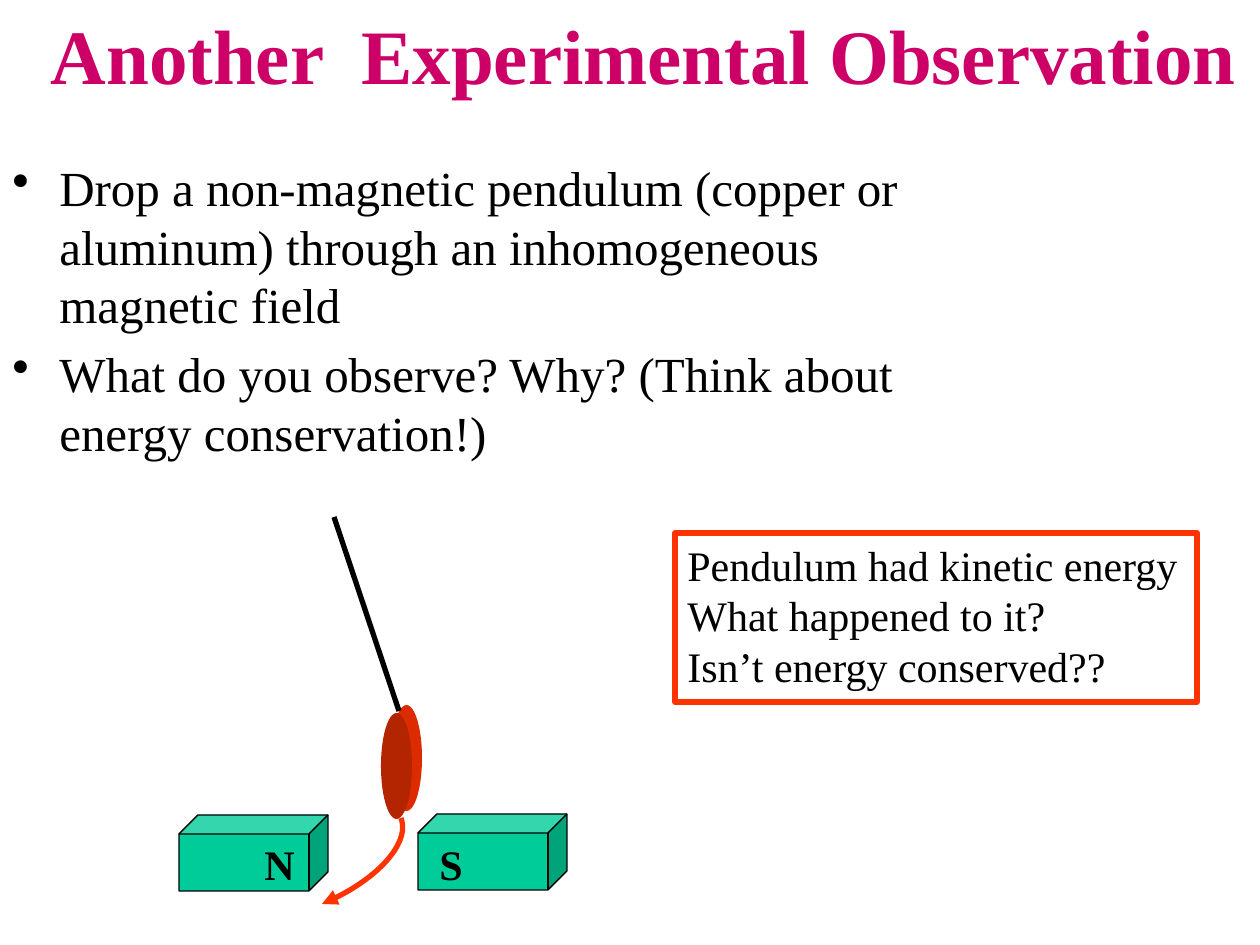
from dataclasses import dataclass
from typing import NamedTuple

from lxml import etree
from pptx import Presentation, util as u
from pptx.dml.color import RGBColor
from pptx.enum import shapes, text
from pptx.oxml import ns

PX = 914400 / 126


@dataclass(frozen=True)
class Theme:
    font: str = "Times New Roman"
    ink: str = "000000"
    title: str = "CC0066"
    magnet: str = "00CC99"
    accent: str = "FF3300"
    rim: str = "DD2B00"
    face: str = "B32400"
    head: int = 44
    body: int = 28
    note: int = 24
    thin: float = 0.75
    thick: int = 3


class Box(NamedTuple):
    x: int
    y: int
    w: int
    h: int


class Magnet(NamedTuple):
    box: Box
    pole: str
    label: Box


class Disc(NamedTuple):
    box: Box
    color: str


T = Theme()
KIND = shapes.MSO_SHAPE


def emu(px: float) -> int:
    return round(px * PX)


def span(box: Box) -> list[int]:
    return [emu(v) for v in box]


def rgb(code: str) -> RGBColor:
    return RGBColor.from_string(code)


def write(frame, lines: list[str], size: int, color: str = T.ink,
          bold: bool = False, align=text.PP_ALIGN.LEFT) -> None:
    for i, line in enumerate(lines):
        para = frame.paragraphs[0] if i == 0 else frame.add_paragraph()
        para.alignment = align
        run = para.add_run()
        run.text = line
        font = run.font
        font.name, font.size, font.bold = T.font, u.Pt(size), bold
        font.color.rgb = rgb(color)


def stroke(line, color: str, width: float) -> None:
    line.color.rgb = rgb(color)
    line.width = u.Pt(width)


def solid(slide, kind, box: Box, fill: str | None):
    shape = slide.shapes.add_shape(kind, *span(box))
    shape.shadow.inherit = False
    if fill:
        shape.fill.solid()
        shape.fill.fore_color.rgb = rgb(fill)
    else:
        shape.fill.background()
    return shape


def bullet(para) -> None:
    prop = para._p.get_or_add_pPr()
    prop.set("marL", str(emu(47)))
    prop.set("indent", str(-emu(47)))
    etree.SubElement(prop, ns.qn("a:buChar")).set("char", "•")


def magnet(slide, item: Magnet) -> None:
    cube = solid(slide, KIND.CUBE, item.box, T.magnet)
    stroke(cube.line, T.ink, T.thin)
    frame = slide.shapes.add_textbox(*span(item.label)).text_frame
    frame.word_wrap = False
    write(frame, [item.pole], T.note, bold=True)


def disc(slide, item: Disc) -> None:
    solid(slide, KIND.OVAL, item.box, item.color).line.fill.background()


def swing(slide, knots: list[tuple[int, int]], steps: int = 32) -> None:
    """Draw a cubic curve through short segments, with an arrowhead."""
    def spot(t: float) -> tuple[int, int]:
        parts = ((1 - t) ** 3, 3 * t * (1 - t) ** 2,
                 3 * t * t * (1 - t), t ** 3)
        x, y = (sum(a * k[i] for a, k in zip(parts, knots)) for i in (0, 1))
        return emu(x), emu(y)

    pts = [spot(i / steps) for i in range(steps + 1)]
    pen = slide.shapes.build_freeform(*pts[0], scale=1.0)
    pen.add_line_segments(pts[1:], close=False)
    curve = pen.convert_to_shape()
    curve.shadow.inherit = False
    curve.fill.background()
    stroke(curve.line, T.accent, T.thick)
    tail = etree.SubElement(curve.line._get_or_add_ln(), ns.qn("a:tailEnd"))
    tail.set("type", "triangle")


def main() -> None:
    deck = Presentation()
    deck.slide_width, deck.slide_height = u.Inches(10), u.Inches(7.5)
    slide = deck.slides.add_slide(deck.slide_layouts[5])

    # Title
    title = slide.shapes.title
    title.left, title.top, title.width, title.height = span(
        Box(0, -25, 1288, 157))
    title.text_frame.vertical_anchor = text.MSO_ANCHOR.MIDDLE
    write(title.text_frame, ["Another  Experimental Observation"], T.head,
          T.title, True, text.PP_ALIGN.CENTER)

    # Bulleted text
    frame = slide.shapes.add_textbox(*span(Box(0, 151, 927, 386))).text_frame
    frame.word_wrap = True
    write(frame, [
        "Drop a non-magnetic pendulum (copper or aluminum) through an "
        "inhomogeneous magnetic field",
        "What do you observe? Why? (Think about energy conservation!)",
    ], T.body)
    for i, para in enumerate(frame.paragraphs):
        para.space_before = u.Pt(T.body * 0.2 if i else 0)
        bullet(para)

    # Magnets
    for item in (
        Magnet(Box(179, 815, 149, 76), "N", Box(252, 832, 55, 63)),
        Magnet(Box(418, 814, 149, 76), "S", Box(427, 832, 49, 63)),
    ):
        magnet(slide, item)

    # Pendulum: bob with a thick rim, rod and swing
    for item in (
        Disc(Box(391, 705, 31, 106), T.rim),
        Disc(Box(381, 713, 31, 106), T.face),
    ):
        disc(slide, item)
    rod = slide.shapes.add_connector(
        shapes.MSO_CONNECTOR.STRAIGHT, emu(399), emu(711), emu(334), emu(517))
    stroke(rod.line, T.ink, T.thick)
    etree.SubElement(rod._element.spPr, ns.qn("a:effectLst"))
    swing(slide, [(401, 818), (411, 844), (375, 882), (322, 904)])

    # Question box
    note = solid(slide, KIND.RECTANGLE, Box(675, 533, 522, 169), None)
    stroke(note.line, T.accent, T.thick)
    note.text_frame.word_wrap = False
    note.text_frame.vertical_anchor = text.MSO_ANCHOR.TOP
    write(note.text_frame, [
        "Pendulum had kinetic energy",
        "What happened to it?",
        "Isn’t energy conserved??",
    ], T.note)

    deck.save("out.pptx")


if __name__ == "__main__":
    main()
